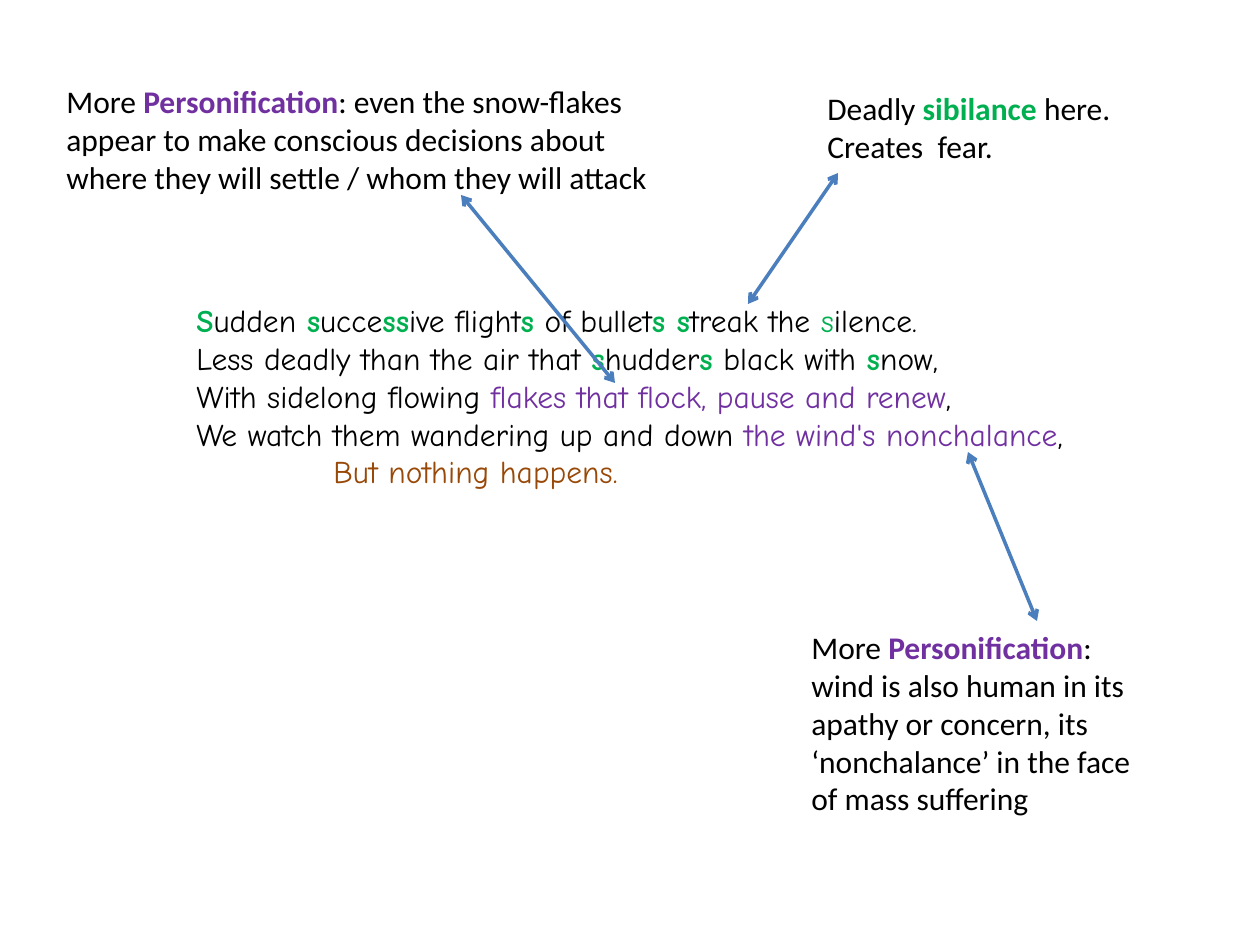
from lxml import etree
from pptx import Presentation, util as u
from pptx.dml.color import RGBColor
from pptx.enum import shapes, text
from pptx.oxml.ns import qn

PX = u.Inches(1) / 126
BLACK, GREEN, PURPLE, BROWN, BLUE = "000000", "00B050", "7030A0", "984807", "4B7EBC"


def px(length):
    return u.Emu(round(length * PX))


def add_text(slide, lines, box, font="Calibri", wrap=True, last_indent=0):
    """Write one paragraph per line; a run is a plain string or (text, colour, bold)."""
    shape = slide.shapes.add_textbox(*map(px, box))
    frame = shape.text_frame
    frame.word_wrap = wrap
    frame.auto_size = text.MSO_AUTO_SIZE.SHAPE_TO_FIT_TEXT
    for number, line in enumerate(lines):
        paragraph = frame.add_paragraph() if number else frame.paragraphs[0]
        for part in line:
            words, colour, bold = (part, BLACK, False) if isinstance(part, str) else part
            run = paragraph.add_run()
            run.text = words
            run.font.name = font
            run.font.size = u.Pt(18)
            run.font.bold = bold
            run.font.color.rgb = RGBColor.from_string(colour)
    if last_indent:
        paragraph._p.get_or_add_pPr().set("marL", str(px(last_indent)))


presentation = Presentation()
presentation.slide_width, presentation.slide_height = u.Inches(10), u.Inches(7.5)
slide = presentation.slides.add_slide(presentation.slide_layouts[6])

s = ("s", GREEN, True)
poem = [
    [("S", GREEN, True), "udden ", s, "ucce", ("ss", GREEN, True), "ive flight", s,
     " of bullet", ("s s", GREEN, True), "treak the ", ("s", GREEN, False), "ilence."],
    ["Less deadly than the air that ", s, "hudder", s, " black with ", s, "now,"],
    ["With sidelong flowing ", ("flakes that flock, pause and renew", PURPLE, False), ","],
    ["We watch them wandering up and down ", ("the wind's nonchalance", PURPLE, False), ","],
    [("But nothing happens.", BROWN, False)],
]
personification = ("Personification", PURPLE, True)
wind_note = [["More ", personification, ": wind is also human in its apathy or concern, "
              "its ‘nonchalance’ in the face of mass suffering"]]
snow_note = [["More ", personification, ": even the snow-flakes appear to make conscious "
              "decisions about where they will settle / whom they will attack"]]
sibilance_note = [["Deadly", (" sibilance ", GREEN, True), "here."], ["Creates  fear."]]

add_text(slide, poem, (184, 295, 983, 204), font="Comic Neue", last_indent=137)
add_text(slide, wind_note, (799, 622, 367, 204))
add_text(slide, snow_note, (54, 76, 630, 127))
add_text(slide, sibilance_note, (815, 83, 311, 89), wrap=False)

arrows = [(968, 452, 1037, 621), (461, 195, 615, 383), (838, 173, 748, 304)]
for ends in arrows:
    arrow = slide.shapes.add_connector(shapes.MSO_CONNECTOR.STRAIGHT, *map(px, ends))
    arrow.line.color.rgb = RGBColor.from_string(BLUE)
    arrow.line.width = u.Pt(2)
    outline = arrow.line._get_or_add_ln()
    for end in ("a:headEnd", "a:tailEnd"):
        etree.SubElement(outline, qn(end), type="arrow")
    etree.SubElement(arrow._element.spPr, qn("a:effectLst"))

presentation.save("out.pptx")
